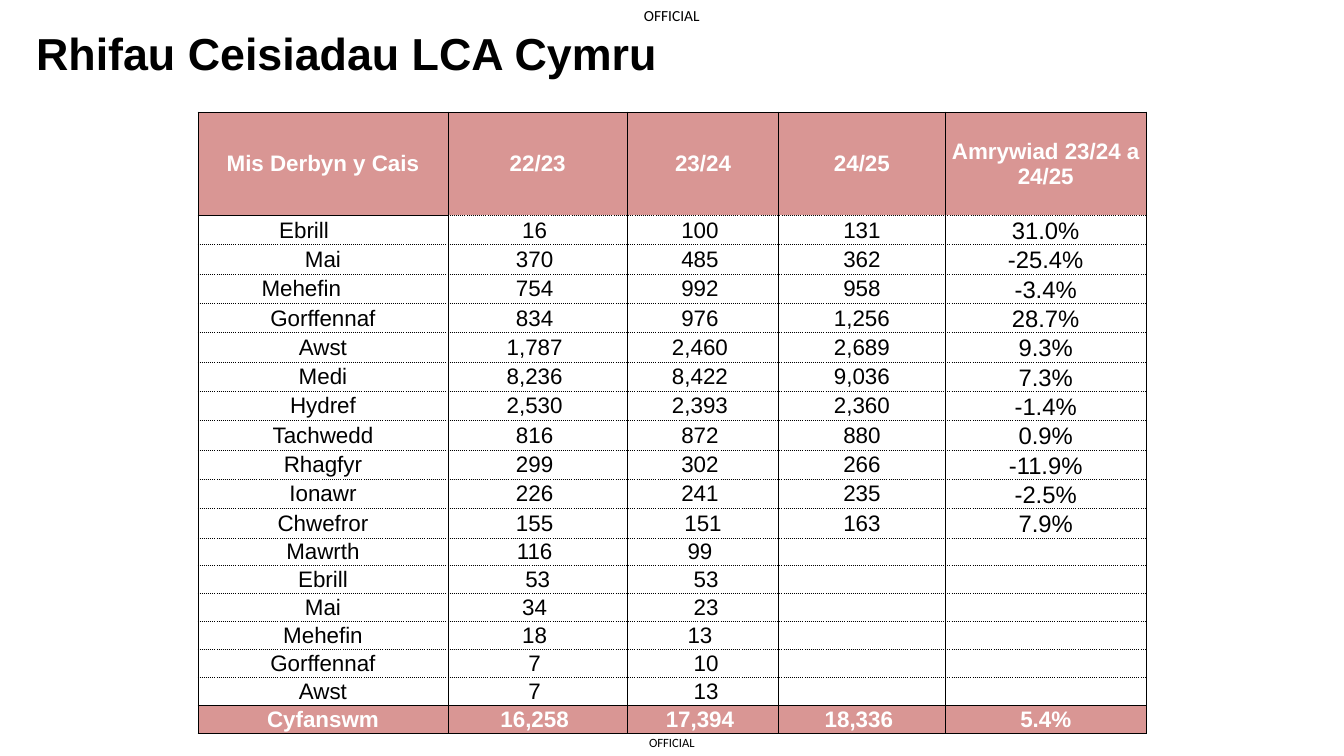
from lxml import etree
from pptx import Presentation
from pptx.dml.color import RGBColor
from pptx.enum.text import MSO_ANCHOR, PP_ALIGN
from pptx.oxml.ns import qn
from pptx.util import Pt

COLOURS = {"ink": "000000", "band": "D99694", "band_text": "FFFFFF"}
TITLE = "Rhifau Ceisiadau LCA Cymru"
MARKING = "OFFICIAL"
ROWS = [
    ("Mis Derbyn y Cais", "22/23", "23/24", "24/25", "Amrywiad 23/24 a 24/25"),
    ("Ebrill", "16", "100", "131", "31.0%"),
    ("Mai", "370", "485", "362", "-25.4%"),
    ("Mehefin", "754", "992", "958", "-3.4%"),
    ("Gorffennaf", "834", "976", "1,256", "28.7%"),
    ("Awst", "1,787", "2,460", "2,689", "9.3%"),
    ("Medi", "8,236", "8,422", "9,036", "7.3%"),
    ("Hydref", "2,530", "2,393", "2,360", "-1.4%"),
    ("Tachwedd", "816", "872", "880", "0.9%"),
    ("Rhagfyr", "299", "302", "266", "-11.9%"),
    ("Ionawr", "226", "241", "235", "-2.5%"),
    ("Chwefror", "155", "151", "163", "7.9%"),
    ("Mawrth", "116", "99", "", ""),
    ("Ebrill", "53", "53", "", ""),
    ("Mai", "34", "23", "", ""),
    ("Mehefin", "18", "13", "", ""),
    ("Gorffennaf", "7", "10", "", ""),
    ("Awst", "7", "13", "", ""),
    ("Cyfanswm", "16,258", "17,394", "18,336", "5.4%"),
]
COLUMN_WIDTHS = (178.6, 128.2, 108, 119, 143.6)
TABLE_LEFT, TABLE_TOP = 141.4, 80
HEADER_HEIGHT, COMPLETE_HEIGHT, PARTIAL_HEIGHT = 73.8, 20.95, 19.9
TOTAL_ROW = len(ROWS) - 1
VARIATION_COLUMN = 4
SPACE = 4.4
NUDGES = {(1, 0): 27, (3, 0): 31, (11, 2): 0, (13, 1): 0, (13, 2): -SPACE,
          (14, 2): -SPACE, (16, 2): -SPACE, (17, 2): -SPACE, (TOTAL_ROW, 3): SPACE}


def colour(name):
    return RGBColor.from_string(COLOURS[name])


def style(paragraph, font_name, size, ink, bold=False, align=PP_ALIGN.CENTER):
    paragraph.alignment = align
    font = paragraph.font
    font.name, font.size, font.bold = font_name, Pt(size), bold
    font.color.rgb = colour(ink)


def add_label(wording, box, font_name, size, inset=(0, 0), anchor=MSO_ANCHOR.MIDDLE, **look):
    frame = slide.shapes.add_textbox(*map(Pt, box)).text_frame
    frame.word_wrap = False
    frame.margin_left = frame.margin_right = Pt(inset[0])
    frame.margin_top = frame.margin_bottom = Pt(inset[1])
    frame.vertical_anchor = anchor
    frame.text = wording
    style(frame.paragraphs[0], font_name, size, "ink", **look)


def add_borders(cell, dotted_sides):
    properties = cell._tc.get_or_add_tcPr()
    for position, side in enumerate("LRTB"):
        line = etree.Element(qn("a:ln" + side), w=str(Pt(0.5)))
        fill = etree.SubElement(line, qn("a:solidFill"))
        etree.SubElement(fill, qn("a:srgbClr"), val=COLOURS["ink"])
        dash = "sysDot" if side in dotted_sides else "solid"
        etree.SubElement(line, qn("a:prstDash"), val=dash)
        properties.insert(position, line)


def dotted(row, column):
    if row == TOTAL_ROW:
        return ""
    if row == 0:
        return "B" if column else ""
    top = "T" if row > 1 or column else ""
    return top + ("B" if row < TOTAL_ROW - 1 else "")


def row_height(row):
    if row == 0:
        return HEADER_HEIGHT
    return COMPLETE_HEIGHT if ROWS[row][VARIATION_COLUMN] and row < TOTAL_ROW else PARTIAL_HEIGHT


def fill_cell(cell, row, column):
    banded = row in (0, TOTAL_ROW)
    if banded:
        cell.fill.solid()
        cell.fill.fore_color.rgb = colour("band")
    else:
        cell.fill.background()
    wording = ROWS[row][column]
    is_variation = column == VARIATION_COLUMN and wording and not banded
    cell.vertical_anchor = MSO_ANCHOR.BOTTOM if is_variation else MSO_ANCHOR.MIDDLE
    nudge = NUDGES.get((row, column), SPACE if row and column in (1, 2) else 0)
    cell.margin_left = Pt(0.7 + max(-nudge, 0))
    cell.margin_right = Pt(0.7 + max(nudge, 0))
    cell.margin_top, cell.margin_bottom = Pt(0.5), 0
    cell.text = wording
    paragraph = cell.text_frame.paragraphs[0]
    style(paragraph, "Arial", 17 if is_variation else 16,
          "band_text" if banded else "ink", bold=banded)
    if not wording:
        etree.SubElement(paragraph._p, qn("a:endParaRPr"), sz="1200")
    add_borders(cell, dotted(row, column))


deck = Presentation()
deck.slide_width, deck.slide_height = Pt(960), Pt(540)
slide = deck.slides.add_slide(deck.slide_layouts[6])

add_label(MARKING, (453.6, 520.6, 52.6, 19.4), "Calibri", 9)
add_label(MARKING, (448.6, 0, 62.6, 22.3), "Calibri", 11)
add_label(TITLE, (18.7, 14.8, 518.4, 46), "Arial", 32, inset=(7.2, 3.6),
          anchor=MSO_ANCHOR.TOP, bold=True, align=PP_ALIGN.LEFT)

heights = [row_height(row) for row in range(len(ROWS))]
applications = slide.shapes.add_table(
    len(ROWS), len(COLUMN_WIDTHS), Pt(TABLE_LEFT), Pt(TABLE_TOP),
    Pt(sum(COLUMN_WIDTHS)), Pt(sum(heights))).table
applications.horz_banding = False
for column, width in enumerate(COLUMN_WIDTHS):
    applications.columns[column].width = Pt(width)
for row, height in enumerate(heights):
    applications.rows[row].height = Pt(height)
    for column in range(len(COLUMN_WIDTHS)):
        fill_cell(applications.cell(row, column), row, column)

deck.save("out.pptx")
